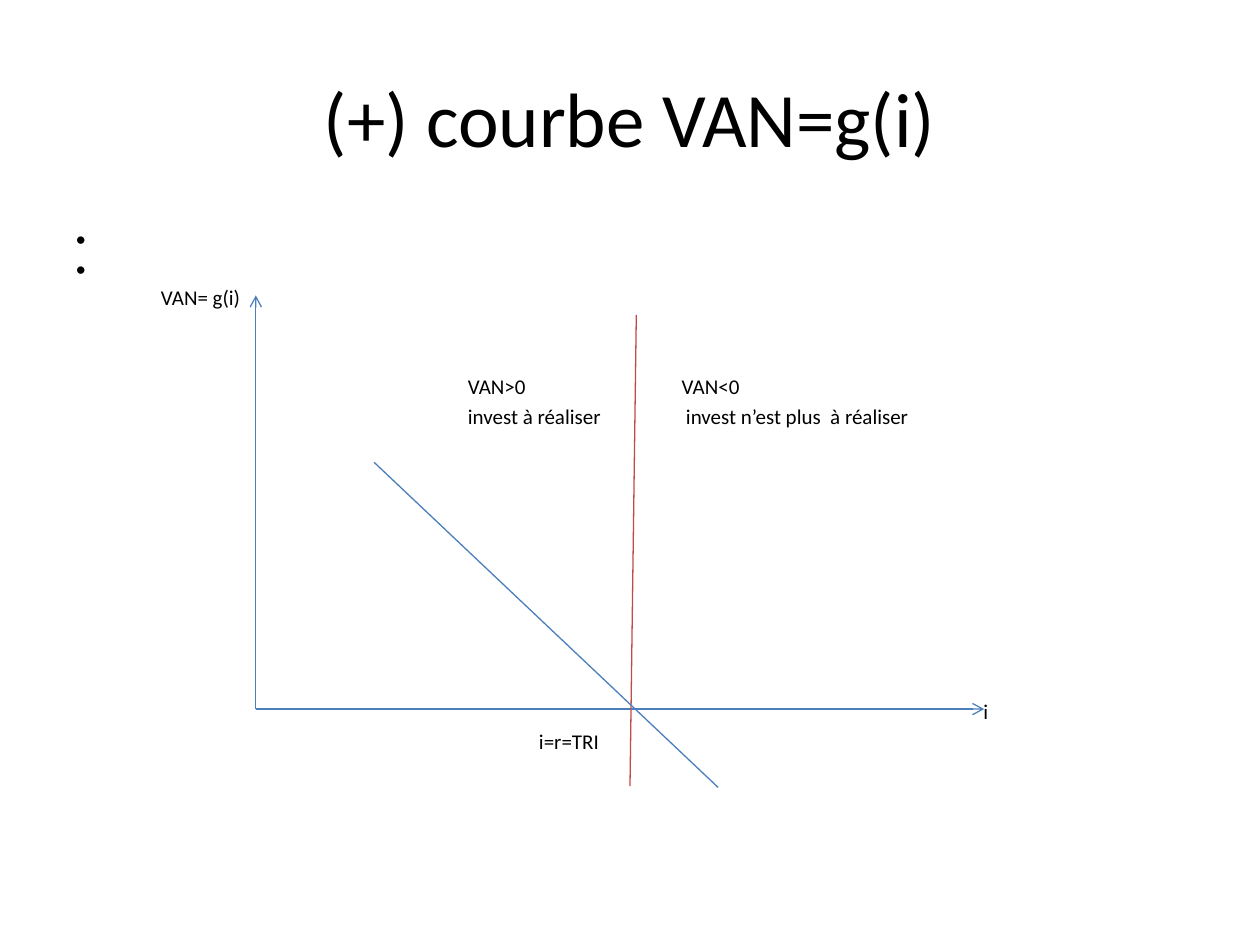
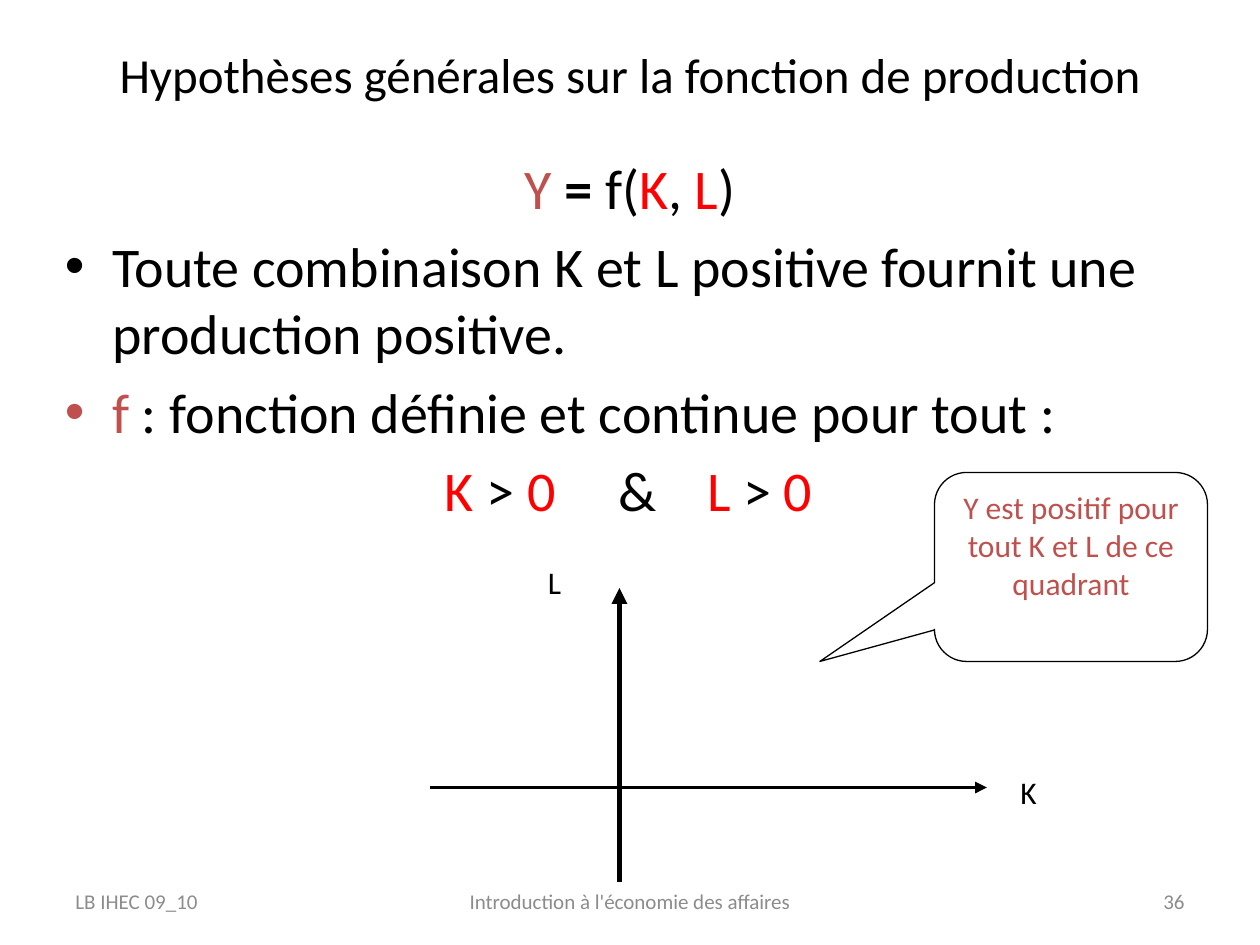
from lxml.etree import SubElement as Sub
from pptx import Presentation
from pptx.dml.color import RGBColor as RGB
from pptx.enum.shapes import MSO_CONNECTOR as Conn, MSO_SHAPE as Kind
from pptx.enum.text import MSO_ANCHOR as Anchor, PP_ALIGN as Align
from pptx.oxml.ns import qn
from pptx.util import Pt

FONT = "Calibri"
BLACK = RGB(0, 0, 0)
GREY = RGB(0x8C, 0x8C, 0x8C)
RED = RGB(0xFF, 0, 0)
BRICK = RGB(0xC0, 0x50, 0x4D)
BLUE = RGB(0x4B, 0x7E, 0xBC)
ROSE = RGB(0xBF, 0x4C, 0x48)
INDENT = 27


def fill(par, runs, size, color):
    for run in [runs] if isinstance(runs, str) else runs:
        text, tint, bold = (run, color, False) if isinstance(run, str) else run
        part = par.add_run()
        part.text = text
        font = part.font
        font.name, font.size, font.bold = FONT, Pt(size), bold
        font.color.rgb = tint


def say(slide, text, at, size=12, color=BLACK, align=Align.LEFT,
        anchor=Anchor.TOP, pad=True, wrap=True):
    frame = slide.shapes.add_textbox(*map(Pt, at)).text_frame
    frame.word_wrap, frame.vertical_anchor = wrap, anchor
    if not pad:
        frame.margin_left = frame.margin_right = 0
        frame.margin_top = frame.margin_bottom = 0
    par = frame.paragraphs[0]
    par.alignment = align
    fill(par, text, size, color)
    return frame


def add_par(frame, runs, size, color=BLACK):
    par = frame.add_paragraph()
    par.space_before = Pt(size * 0.2)
    fill(par, runs, size, color)
    return par._p.get_or_add_pPr()


def add_item(frame, runs, size):
    props = add_par(frame, runs, size)
    props.set("marL", str(Pt(INDENT)))
    props.set("indent", str(Pt(-INDENT)))
    Sub(props, qn("a:buFont"), typeface="Arial")
    Sub(props, qn("a:buChar"), char="•")


def add_tabs(frame, runs, size, stops):
    tabs = Sub(add_par(frame, runs, size), qn("a:tabLst"))
    for stop in stops:
        Sub(tabs, qn("a:tab"), pos=str(Pt(stop)), algn="l")


def draw(slide, start, end, color, width=0.75, tip=None):
    line = slide.shapes.add_connector(Conn.STRAIGHT, *map(Pt, start + end))
    line.line.color.rgb, line.line.width = color, Pt(width)
    if tip:
        Sub(line.line._get_or_add_ln(), qn("a:tailEnd"), type=tip)
    Sub(line._element.spPr, qn("a:effectLst"))


def title(slide, text, at, size):
    say(slide, text, at, size=size, align=Align.CENTER, anchor=Anchor.MIDDLE)


def footer(slide, number):
    for text, left, width, align in (
            ("LB IHEC 09_10", 36, 168, Align.LEFT),
            ("Introduction à l'économie des affaires", 246, 228, Align.CENTER),
            (number, 516, 168, Align.RIGHT)):
        say(slide, text, (left, 500.5, width, 28.75), color=GREY,
            align=align, anchor=Anchor.MIDDLE)


def callout(slide, text, at, adjust):
    shape = slide.shapes.add_shape(Kind.ROUNDED_RECTANGULAR_CALLOUT,
                                   *map(Pt, at))
    shape.shadow.inherit = False
    shape.fill.background()
    shape.line.color.rgb, shape.line.width = BLACK, Pt(0.75)
    for spot, value in enumerate(adjust):
        shape.adjustments[spot] = value
    frame = shape.text_frame
    frame.word_wrap, frame.vertical_anchor = True, Anchor.TOP
    par = frame.paragraphs[0]
    par.alignment = Align.CENTER
    fill(par, text, 18, BRICK)


def curve(slide):
    title(slide, "(+) courbe VAN=g(i)", (36, 21.6, 648, 90), 44)
    top, step = 129, 16.9
    for text, left, row in (
            ("•", 43.2, 0), ("•", 43.2, 1), ("VAN= g(i)", 92, 2),
            ("VAN>0", 267.4, 5), ("VAN<0", 389.6, 5),
            ("invest à réaliser", 267.4, 6),
            ("invest n’est plus  à réaliser", 392, 6),
            ("i", 562, 16), ("i=r=TRI", 308, 17)):
        say(slide, text, (left, top + row * step, 150, step),
            pad=False, wrap=False)
    origin = (146.2, 405.2)
    draw(slide, origin, (146.2, 168.8), BLUE, tip="arrow")
    draw(slide, origin, (562.4, 405.2), BLUE, tip="arrow")
    draw(slide, (360, 449.2), (363.6, 180), ROSE)
    draw(slide, (213.8, 264.2), (410.4, 450), BLUE)


def theory(slide):
    title(slide, "Hypothèses générales sur la fonction de production",
          (54, 18, 612, 48), 28)
    size = 32
    body = say(slide, [("Y", BRICK, False), (" =", BLACK, True), " f(",
                       ("K", RED, False), ", ", ("L", RED, False), ")"],
               (30, 84, 660, 402), size=size, align=Align.CENTER)
    add_item(body, "Toute combinaison K et L positive fournit "
                   "une production positive.", size)
    add_item(body, [("f ", BRICK, False),
                    ": fonction définie et continue pour tout :"], size)
    add_tabs(body, [("\tK ", RED, False), "> ", ("0", RED, False), "\t&",
                    ("\tL", RED, False), " > ", ("0", RED, False)],
             size, (217, 316.5, 367))
    draw(slide, (246, 450), (564, 450), BLACK, 2.25, "triangle")
    draw(slide, (354, 504), (354, 336), BLACK, 3, "triangle")
    for text, left, top in (("K", 576, 438), ("L", 306, 318)):
        say(slide, text, (left, top, 36, 31), size=18)
    callout(slide, "Y est positif pour tout K et L de ce quadrant",
            (534, 270, 156, 108), (-0.92, 0.5, 0.17))
    footer(slide, "36")


def main():
    deck = Presentation()
    deck.slide_width, deck.slide_height = Pt(720), Pt(540)
    for build in (curve, theory):
        build(deck.slides.add_slide(deck.slide_layouts[6]))
    deck.save("out.pptx")


if __name__ == "__main__":
    main()
